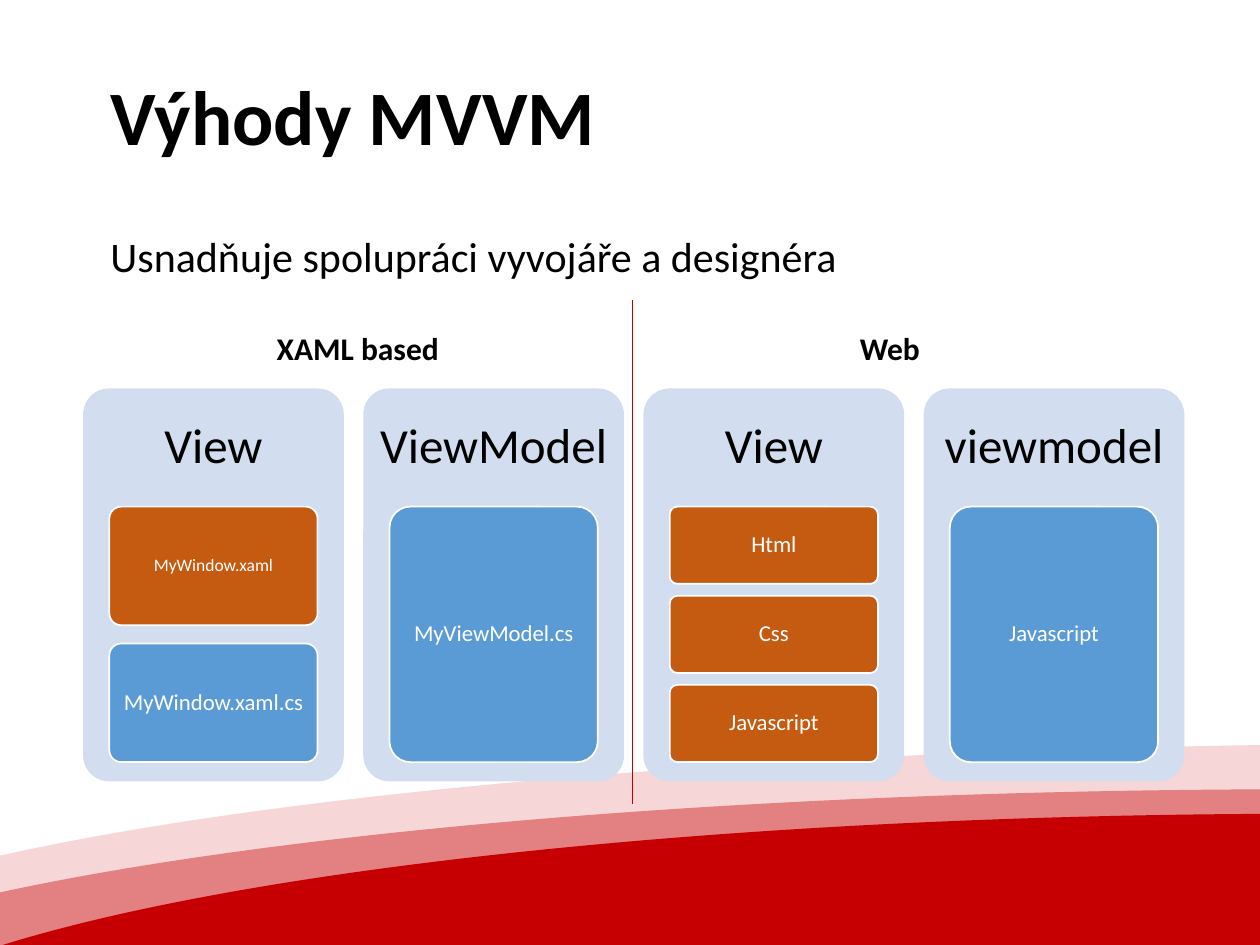
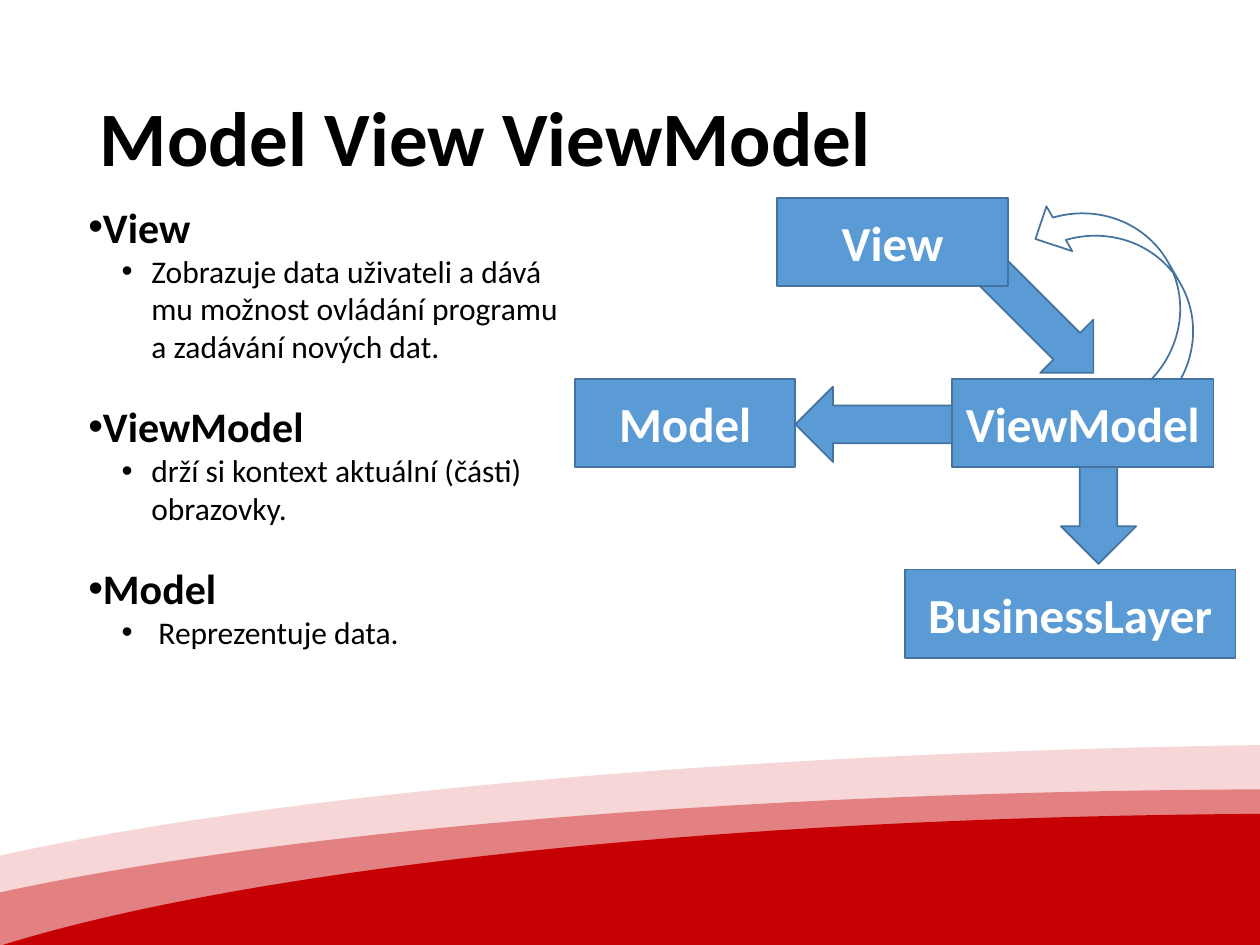
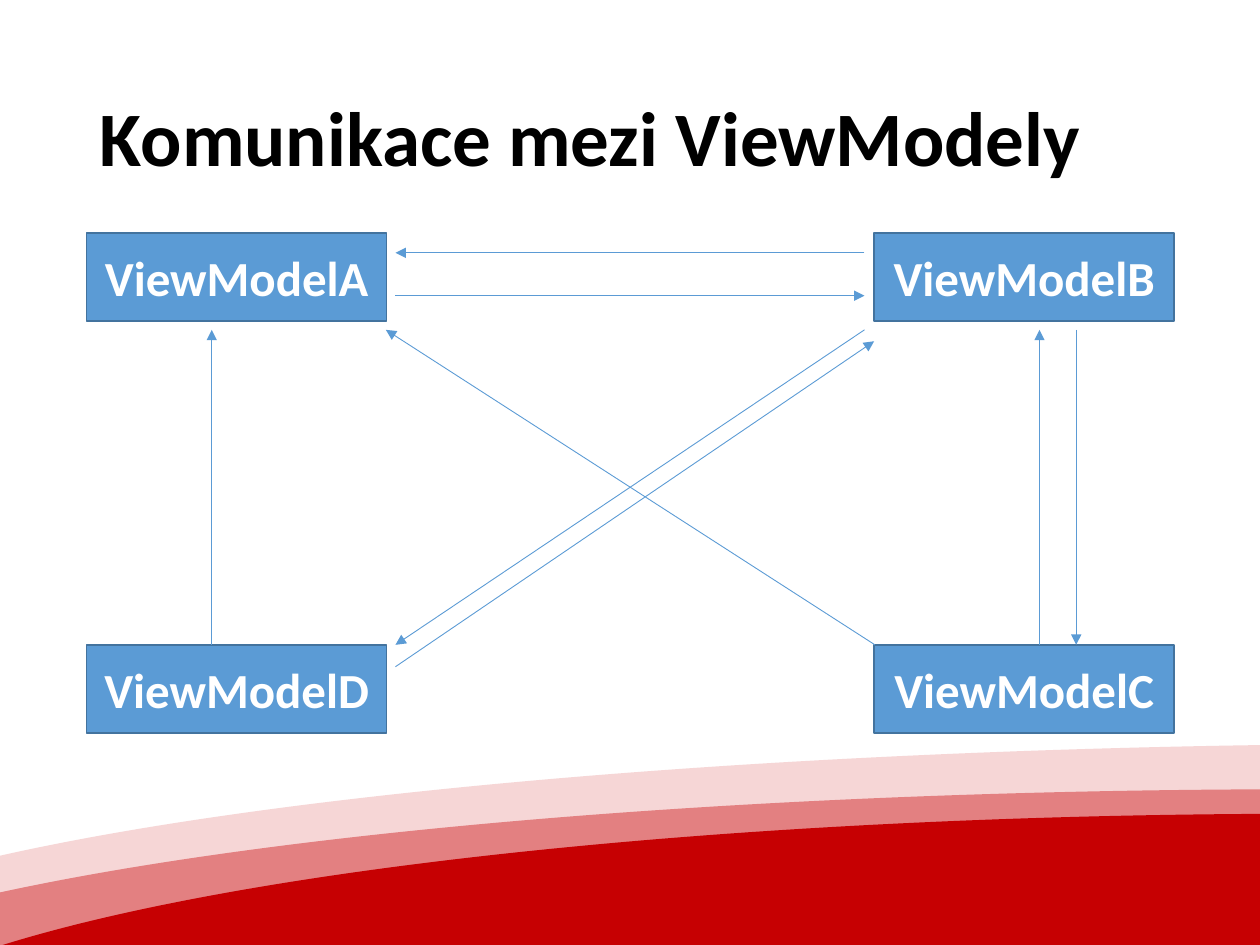
import dataclasses

import pptx
import pptx.dml.color
import pptx.enum.shapes
import pptx.enum.text
import pptx.oxml
import pptx.oxml.ns
import pptx.util

Pt = pptx.util.Pt
Kind = pptx.enum.shapes.MSO_SHAPE
Align = pptx.enum.text.PP_ALIGN
Anchor = pptx.enum.text.MSO_ANCHOR


@dataclasses.dataclass(frozen=True)
class Theme:
    font: str = "Calibri"
    black: str = "000000"
    white: str = "FFFFFF"
    blue: str = "5B9BD5"
    edge: str = "43739E"
    pale: str = "D2DEEF"
    rust: str = "C55A11"
    rule: str = "C00000"
    bands: tuple = ("F6D6D6", "E38081", "C60002")
    title: int = 44
    label: int = 28
    lead: int = 24
    body: int = 18
    tile: int = 13
    small: int = 10
    thin: float = 0.5


T = Theme()

# All places are left, top, width, height in points.
PAGE = (720, 540)
WAVES = [(-146, 425, 1940, 271), (-164, 451, 1820, 276), (-101.5, 465, 1699, 287)]
TITLE = (50, 29, 620, 104)

GAINS = {
    "title": "Výhody MVVM",
    "at": (56, 12, 612, 114),
    "lead": "Usnadňuje spolupráci vyvojáře a designéra",
    "sides": [("XAML based", 204.5), ("Web", 508.5)],
    "cards": [
        ("View", [("MyWindow.xaml", T.rust, T.small),
                  ("MyWindow.xaml.cs", T.blue, T.tile)]),
        ("ViewModel", [("MyViewModel.cs", T.blue, T.tile)]),
        ("View", [("Html", T.rust, T.tile), ("Css", T.rust, T.tile),
                  ("Javascript", T.rust, T.tile)]),
        ("viewmodel", [("Javascript", T.blue, T.tile)]),
    ],
}

PARTS = {
    "title": "Model View ViewModel",
    "roles": [
        ("View", "Zobrazuje data uživateli a dává mu možnost ovládání "
                 "programu a zadávání nových dat."),
        ("ViewModel", "drží si kontext aktuální (části) obrazovky."),
        ("Model", " Reprezentuje data."),
    ],
    "arrows": [
        ((553.5, 162, 83.5, 43), 225),
        ((454.5, 221, 89.5, 43), 0),
        ((600, 273, 55.5, 43), 270),
    ],
    "loop": (614, 100, 59, 134.5),
    "boxes": [
        ("Model", 328.5, 216.5, 126),
        ("ViewModel", 544, 216.5, 149.5),
        ("View", 444, 113, 132),
        ("BusinessLayer", 517, 325.5, 189),
    ],
}

TALK = {
    "title": "Komunikace mezi ViewModely",
    "grid": [["ViewModelA", "ViewModelB"], ["ViewModelD", "ViewModelC"]],
    "links": [
        ((494, 144.5), (226, 144.5)),
        ((226, 169), (494, 169)),
        ((500, 368.5), (220.5, 188.5)),
        ((615, 188.5), (615, 368.5)),
        ((594, 368.5), (594, 188.5)),
        ((494, 188.5), (226, 368.5)),
        ((121, 368.5), (121, 188.5)),
        ((226, 381), (499.5, 195)),
    ],
}


def tint(code):
    return pptx.dml.color.RGBColor.from_string(code)


def style(para, size, color=T.black, bold=False):
    para.font.name = T.font
    para.font.size = Pt(size)
    para.font.bold = bold
    para.font.color.rgb = tint(color)


def write(shape, text, size, color=T.black, bold=False, mid=True, wrap=False):
    """Put one styled paragraph in a shape, centred when mid is true."""
    frame = shape.text_frame
    frame.word_wrap = wrap
    frame.vertical_anchor = Anchor.MIDDLE if mid else Anchor.TOP
    para = frame.paragraphs[0]
    para.text = text
    para.alignment = Align.CENTER if mid else Align.LEFT
    style(para, size, color, bold)
    return para


def note(slide, at):
    return slide.shapes.add_textbox(*map(Pt, at))


def draw(slide, kind, at, fill=None, line=None):
    shape = slide.shapes.add_shape(kind, *map(Pt, at))
    shape.shadow.inherit = False
    if fill:
        shape.fill.solid()
        shape.fill.fore_color.rgb = tint(fill)
    else:
        shape.fill.background()
    if line:
        shape.line.color.rgb = tint(line)
        shape.line.width = Pt(1)
    else:
        shape.line.fill.background()
    return shape


def add(part, tag, **attrs):
    node = part.makeelement(pptx.oxml.ns.qn(tag), attrs)
    part.append(node)
    return node


def link(slide, start, end, color, head=False):
    kind = pptx.enum.shapes.MSO_CONNECTOR.STRAIGHT
    line = slide.shapes.add_connector(kind, *map(Pt, start + end))
    line.line.color.rgb = tint(color)
    line.line.width = Pt(T.thin)
    if head:
        add(line.line._get_or_add_ln(), "a:tailEnd", type="triangle")
    add(line.element.spPr, "a:effectLst")


def bullet(para, left, hang):
    props = para._p.get_or_add_pPr()
    props.set("marL", str(Pt(left)))
    props.set("indent", str(Pt(-hang)))
    add(props, "a:buFont", typeface="Arial")
    add(props, "a:buChar", char="•")


def start(deck, title, at=TITLE):
    """Add a slide with the red waves and its title."""
    slide = deck.slides.add_slide(deck.slide_layouts[6])
    for place, color in zip(WAVES, T.bands):
        draw(slide, Kind.OVAL, place, color)
    para = write(note(slide, at), title, T.title, bold=True, wrap=True)
    para.alignment = Align.LEFT
    para.line_spacing = 0.9
    return slide


def box(slide, text, left, top, width):
    shape = draw(slide, Kind.RECTANGLE, (left, top, width, 50.5), T.blue, T.edge)
    write(shape, text, T.label, T.white, True)


def card(slide, left, name, tiles):
    """Draw a panel whose tiles share its height, with gaps in proportion."""
    top, width, inset, room, ratio = 222, 149, 15, 146, 0.154
    panel = draw(slide, Kind.ROUNDED_RECTANGLE, (left, top, width, 224.5), T.pale)
    panel.adjustments[0] = 0.1
    write(note(slide, (left, top, width, 67)), name, T.label).line_spacing = 0.9
    high = room / (len(tiles) + (len(tiles) - 1) * ratio)
    for i, (text, fill, size) in enumerate(tiles):
        y = top + 67.5 + i * high * (1 + ratio)
        tile = draw(slide, Kind.ROUNDED_RECTANGLE,
                    (left + inset, y, width - 2 * inset, high), fill, T.white)
        tile.adjustments[0] = 0.1
        write(tile, text, size, T.white).line_spacing = 0.9


def gains(deck):
    slide = start(deck, GAINS["title"], GAINS["at"])
    lead = note(slide, (56, 128, 603, 58))
    write(lead, GAINS["lead"], T.lead, mid=False, wrap=True)
    for i, (name, tiles) in enumerate(GAINS["cards"]):
        card(slide, 47.5 + i * 160.1, name, tiles)
    link(slide, (361.5, 171.5), (361.5, 459.5), T.rule)
    for text, mid in GAINS["sides"]:
        write(note(slide, (mid - 54, 184.5, 108, 29)), text, T.body, bold=True)


def roles(slide):
    frame = note(slide, (24, 115, 305, 290)).text_frame
    frame.word_wrap = True
    frame.margin_left = Pt(26.5)
    frame.margin_top = frame.margin_bottom = 0
    para = frame.paragraphs[0]
    for i, (name, text) in enumerate(PARTS["roles"]):
        if i:
            para = frame.add_paragraph()
        para.text = name
        style(para, T.lead, bold=True)
        bullet(para, 0, 0)
        para = frame.add_paragraph()
        para.text = text
        para.level = 1
        para.space_after = Pt(20.5)
        style(para, T.body)
        bullet(para, 36, 17)


def parts(deck):
    slide = start(deck, PARTS["title"])
    roles(slide)
    for at, turn in PARTS["arrows"]:
        draw(slide, Kind.LEFT_ARROW, at, T.blue, T.edge).rotation = turn
    loop = draw(slide, Kind.CURVED_LEFT_ARROW, PARTS["loop"], line=T.edge)
    loop.rotation = 150
    loop.element.spPr.xfrm.set("flipH", "1")
    for item in PARTS["boxes"]:
        box(slide, *item)


def talk(deck):
    slide = start(deck, TALK["title"])
    for j, row in enumerate(TALK["grid"]):
        for i, name in enumerate(row):
            box(slide, name, 49.5 + i * 450, 133 + j * 235.5, 171.5)
    for a, b in TALK["links"]:
        link(slide, a, b, T.blue, True)


def main():
    deck = pptx.Presentation()
    deck.slide_width, deck.slide_height = map(Pt, PAGE)
    for make in (gains, parts, talk):
        make(deck)
    deck.save("out.pptx")


if __name__ == "__main__":
    main()
